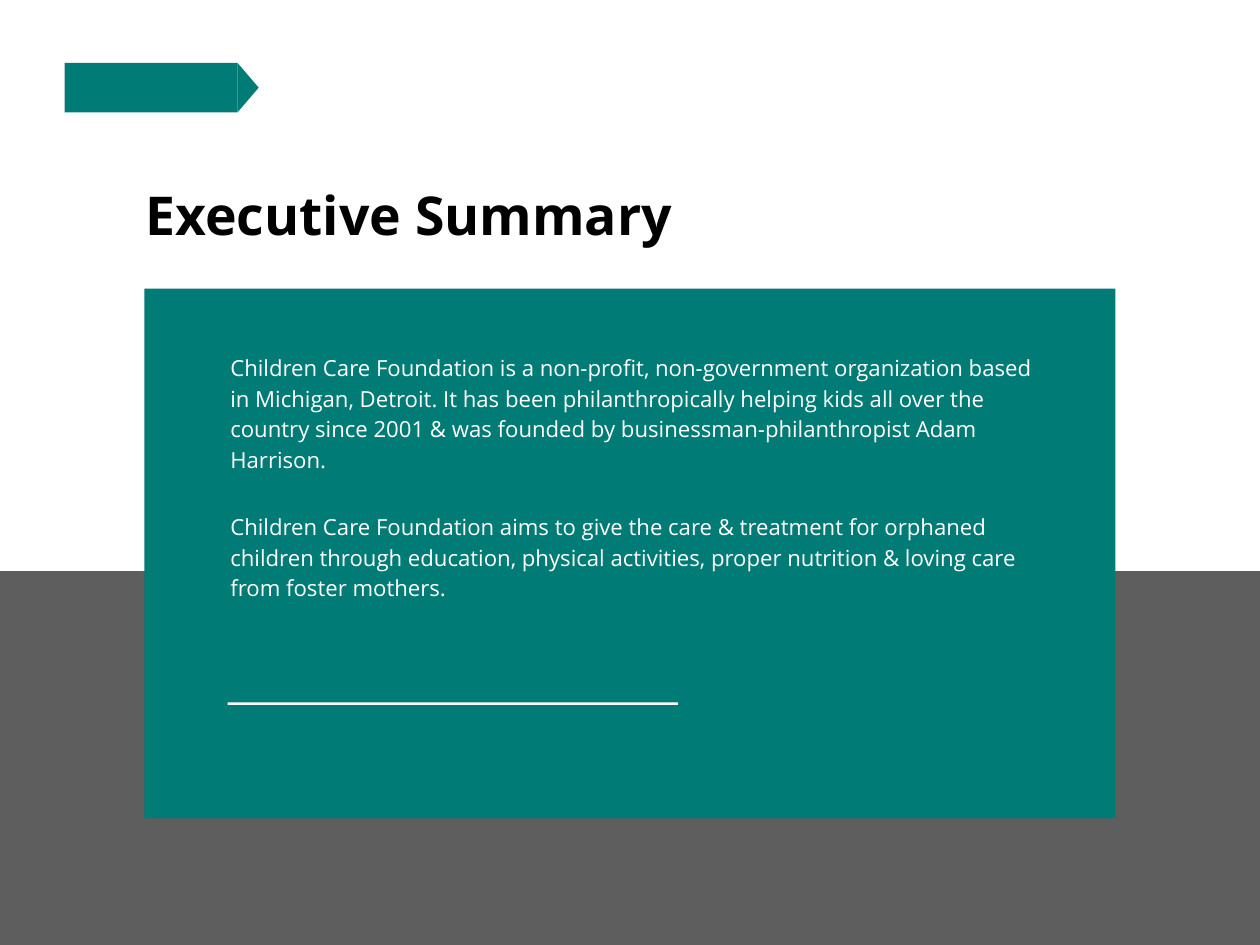
from pptx import Presentation
from pptx.dml.color import RGBColor
from pptx.enum.shapes import MSO_SHAPE
from pptx.enum.text import MSO_ANCHOR
from pptx.util import Inches, Pt

RECT = MSO_SHAPE.RECTANGLE
TOP, MIDDLE = MSO_ANCHOR.TOP, MSO_ANCHOR.MIDDLE
WIDE, HIGH = 14.22, 10.67
TEAL, GRAY, WHITE, BLACK = "007B75", "5E5E5E", "FFFFFF", "000000"
FONT = "Open Sans"
INSET = 0.03

TITLE = "Executive Summary"
BODY = [
    "Children Care Foundation is a non-profit, non-government organization "
    "based in Michigan, Detroit. It has been philanthropically helping kids "
    "all over the country since 2001 & was founded by "
    "businessman-philanthropist Adam Harrison.",
    "Children Care Foundation aims to give the care & treatment for orphaned "
    "children through education, physical activities, proper nutrition & "
    "loving care from foster mothers.",
]


def color(code):
    return RGBColor.from_string(code)


def paint(shape, code):
    shape.shadow.inherit = False
    shape.fill.solid()
    shape.fill.fore_color.rgb = color(code)
    shape.line.fill.background()


def block(slide, box, code):
    paint(slide.shapes.add_shape(RECT, *map(Inches, box)), code)


def write(slide, box, texts, size=18, code=WHITE, bold=False,
          anchor=TOP, lines=1.0, gap=0):
    frame = slide.shapes.add_textbox(*map(Inches, box)).text_frame
    frame.word_wrap = True
    frame.vertical_anchor = anchor
    frame.margin_left = frame.margin_right = Inches(INSET)
    frame.margin_top = frame.margin_bottom = Inches(INSET)
    for i, text in enumerate(texts):
        para = frame.add_paragraph() if i else frame.paragraphs[0]
        para.line_spacing = lines
        para.space_before = Pt(gap if i else 0)
        run = para.add_run()
        run.text = text
        run.font.name = FONT
        run.font.size = Pt(size)
        run.font.bold = bold
        run.font.color.rgb = color(code)


def tag(slide, box):
    """Bar with a pointed right end."""
    left, top, width, height = box
    tip = 0.24
    neck = left + width - tip
    block(slide, (left, top, width - tip, height), TEAL)
    pen = slide.shapes.build_freeform(Inches(neck), Inches(top))
    pen.add_line_segments([
        (Inches(left + width), Inches(top + height / 2)),
        (Inches(neck), Inches(top + height)),
    ], close=True)
    paint(pen.convert_to_shape(), TEAL)


def panel(slide, box):
    """Teal card with the summary and a rule below it."""
    left, top, width, height = box
    block(slide, box, TEAL)
    inner = left + 0.94
    write(slide, (inner, top + 0.67, width * 0.84, height * 0.6), BODY,
          lines=1.15, gap=30)
    block(slide, (inner, top + 4.67, 5.08, 0.03), WHITE)


def main():
    deck = Presentation()
    deck.slide_width, deck.slide_height = Inches(WIDE), Inches(HIGH)
    slide = deck.slides.add_slide(deck.slide_layouts[6])

    # Lower band
    floor = 6.45
    block(slide, (0, floor, WIDE, HIGH - floor), GRAY)

    # Tag, card and title
    tag(slide, (0.73, 0.71, 2.19, 0.56))
    panel(slide, (1.63, 3.26, 10.96, 5.98))
    write(slide, (1.61, 2.06, 7.29, 0.89), [TITLE], size=43.5, code=BLACK,
          bold=True, anchor=MIDDLE, lines=0.7)

    deck.save("out.pptx")


if __name__ == "__main__":
    main()
